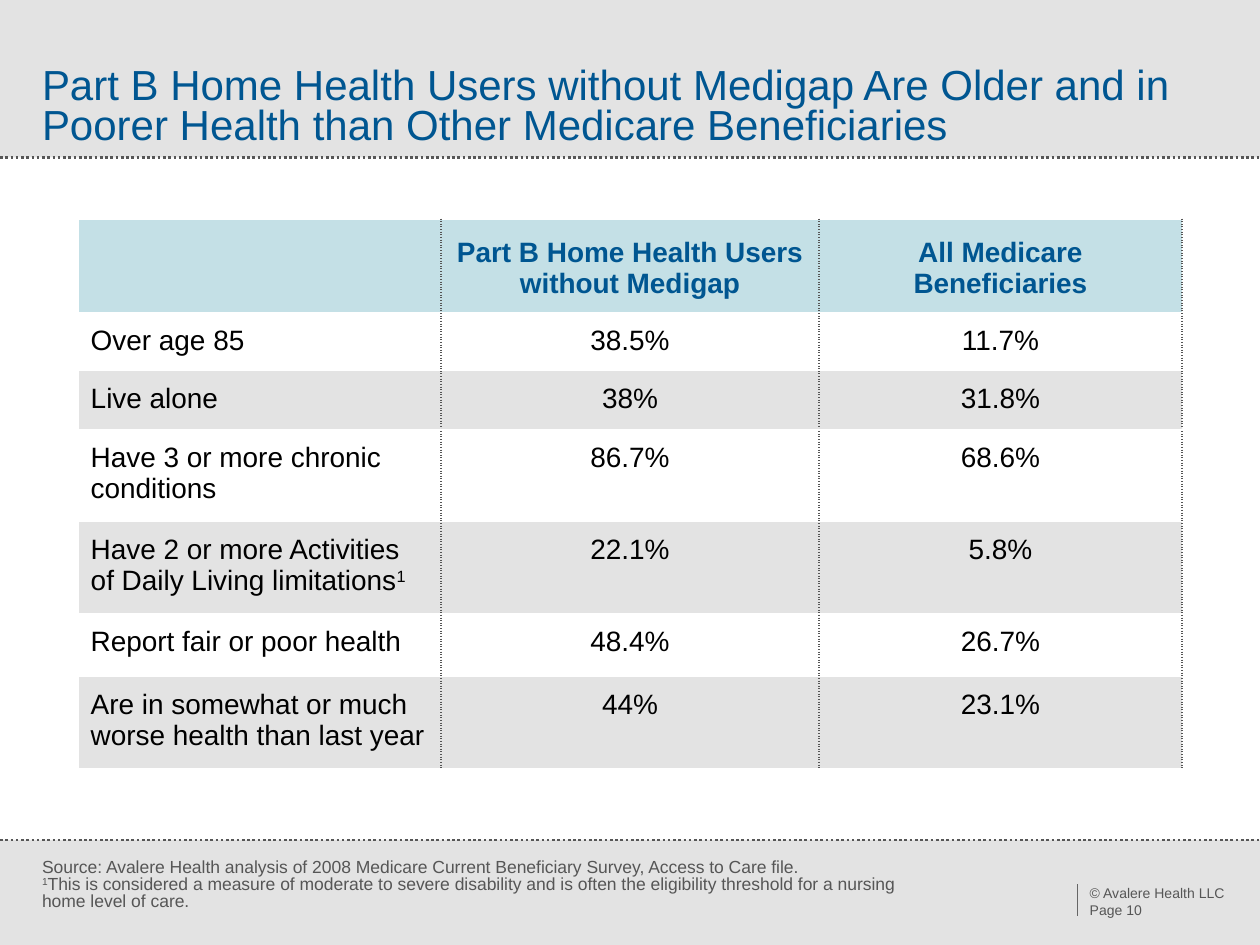
import pptx
import pptx.dml.color
import pptx.enum.dml
import pptx.enum.shapes
import pptx.enum.text
import pptx.oxml
import pptx.oxml.ns
import pptx.util

W, H = 10, 7.5
MARGIN = W / 30
BLUE, GRAY, BAND, HEAD, BLACK, WHITE = "005691", "565656", "E3E3E3", "C4E0E6", "000000", "FFFFFF"
TITLE = ("Part B Home Health Users without Medigap Are Older and in "
         "Poorer Health than Other Medicare Beneficiaries")
NOTES = [
    [("Source: Avalere Health analysis of 2008 Medicare Current Beneficiary Survey, "
      "Access to Care file.", False)],
    [("1", True),
     ("This is considered a measure of moderate to severe disability and is often "
      "the eligibility threshold for a nursing home level of care.", False)],
]
CREDIT = [[("© Avalere Health LLC\vPage 10", False)]]
ROWS = [
    ("", "Part B Home Health Users without Medigap", "All Medicare Beneficiaries"),
    ("Over age 85", "38.5%", "11.7%"),
    ("Live alone", "38%", "31.8%"),
    ("Have 3 or more chronic conditions", "86.7%", "68.6%"),
    ("Have 2 or more Activities of Daily Living limitations", "22.1%", "5.8%"),
    ("Report fair or poor health", "48.4%", "26.7%"),
    ("Are in somewhat or much worse health than last year", "44%", "23.1%"),
]
FOOTNOTED_ROW = 4
COLUMN_WIDTHS = [2.88, 3, 2.88]
ROW_HEIGHTS = [0.74, 0.46, 0.47, 0.73, 0.73, 0.5, 0.73]
BANDS = [(0, H / 6), (H * 8 / 9, H / 9)]
RULES = [(0, H * 8 / 9, W, H * 8 / 9, GRAY, 1.5, True),
         (0, H / 6, W, H / 6, GRAY, 1.5, True),
         (8.55, 7.02, 8.55, 7.27, "666666", 0.5, False)]

inch = pptx.util.Inches
anchors = pptx.enum.text.MSO_ANCHOR


def rgb(color):
    return pptx.dml.color.RGBColor.from_string(color)


def style(p, size, color, bold=False):
    p.font.name = "Arial"
    p.font.size = pptx.util.Pt(size)
    p.font.color.rgb = rgb(color)
    p.font.bold = bold


def add_run(p, text, raised=False):
    for i, line in enumerate(text.split("\v")):
        if i:
            p.add_line_break()
        r = p.add_run()
        r.text = line
        if raised:
            r._r.get_or_add_rPr().set("baseline", "30000")


def set_frame(tf, insets, anchor):
    tf.word_wrap = True
    tf.auto_size = pptx.enum.text.MSO_AUTO_SIZE.NONE
    tf.vertical_anchor = anchor
    tf.margin_left, tf.margin_top, tf.margin_right, tf.margin_bottom = map(inch, insets)


def add_text(s, box, paragraphs, size, insets, spacing):
    tf = s.shapes.add_textbox(*map(inch, box)).text_frame
    set_frame(tf, insets, anchors.TOP)
    for i, runs in enumerate(paragraphs):
        p = tf.add_paragraph() if i else tf.paragraphs[0]
        for text, raised in runs:
            add_run(p, text, raised)
        p.line_spacing = spacing
        style(p, size, GRAY)


def add_band(s, top, height):
    sp = s.shapes.add_shape(pptx.enum.shapes.MSO_SHAPE.RECTANGLE,
                            0, inch(top), inch(W), inch(height))
    sp.shadow.inherit = False
    sp.fill.solid()
    sp.fill.fore_color.rgb = rgb(BAND)
    sp.line.fill.background()


def add_rule(s, x1, y1, x2, y2, color, width, dotted):
    line = s.shapes.add_connector(pptx.enum.shapes.MSO_CONNECTOR.STRAIGHT,
                                  *map(inch, (x1, y1, x2, y2)))
    line.line.color.rgb = rgb(color)
    line.line.width = pptx.util.Pt(width)
    if dotted:
        line.line.dash_style = pptx.enum.dml.MSO_LINE.ROUND_DOT
    line._element.spPr.append(pptx.oxml.parse_xml(
        f'<a:effectLst {pptx.oxml.ns.nsdecls("a")}/>'))


def add_borders(cell, sides):
    tcPr = cell._tc.get_or_add_tcPr()
    for i, side in enumerate(sides):
        tcPr.insert(i, pptx.oxml.parse_xml(
            f'<a:ln{side} {pptx.oxml.ns.nsdecls("a")} w="19050"><a:solidFill>'
            f'<a:srgbClr val="{GRAY}"/></a:solidFill><a:prstDash val="sysDot"/></a:ln{side}>'))


def fill_cell(cell, row, col, text):
    cell.fill.solid()
    cell.fill.fore_color.rgb = rgb(HEAD if row == 0 else (WHITE, BAND)[(row + 1) % 2])
    cell.margin_left = cell.margin_right = cell.margin_top = cell.margin_bottom = inch(0.1)
    cell.vertical_anchor = anchors.TOP if row else anchors.BOTTOM
    add_borders(cell, "LR" if col else "R")
    p = cell.text_frame.paragraphs[0]
    if text:
        add_run(p, text)
    if (row, col) == (FOOTNOTED_ROW, 0):
        add_run(p, "1", True)
    p.alignment = pptx.enum.text.PP_ALIGN.CENTER if col else pptx.enum.text.PP_ALIGN.LEFT
    style(p, 16, BLACK if row else BLUE, row == 0)


def add_comparison(s):
    frame = s.shapes.add_table(len(ROWS), len(COLUMN_WIDTHS), inch(0.62), inch(1.74),
                               inch(sum(COLUMN_WIDTHS)), inch(sum(ROW_HEIGHTS)))
    table = frame.table
    table.horz_banding = table.first_row = False
    for column, width in zip(table.columns, COLUMN_WIDTHS):
        column.width = inch(width)
    for i, (row, height) in enumerate(zip(table.rows, ROW_HEIGHTS)):
        row.height = inch(height)
        for j, text in enumerate(ROWS[i]):
            fill_cell(table.cell(i, j), i, j, text)


def set_title(s):
    title = s.shapes.title
    title.left, title.top = inch(MARGIN), inch(0.53)
    title.width, title.height = inch(W - 2 * MARGIN), inch(0.65)
    title.text_frame.text = TITLE
    set_frame(title.text_frame, (0, 0, 0, 0), anchors.BOTTOM)
    p = title.text_frame.paragraphs[0]
    p.alignment = pptx.enum.text.PP_ALIGN.LEFT
    p.line_spacing = 0.8
    style(p, 24, BLUE)
    s.shapes._spTree.append(title._element)


def main():
    prs = pptx.Presentation()
    prs.slide_width, prs.slide_height = inch(W), inch(H)
    s = prs.slides.add_slide(prs.slide_layouts[5])
    for band in BANDS:
        add_band(s, *band)
    for rule in RULES:
        add_rule(s, *rule)
    add_text(s, (8.55, 7.02, 1.33, 0.32), CREDIT, 8, (0.1, 0, 0.1, 0.05), 1)
    set_title(s)
    add_text(s, (MARGIN, 6.83, 7.08, 0.4), NOTES, 10, (0, 0, 0, 0), 0.8)
    add_comparison(s)
    prs.save("out.pptx")


if __name__ == "__main__":
    main()
